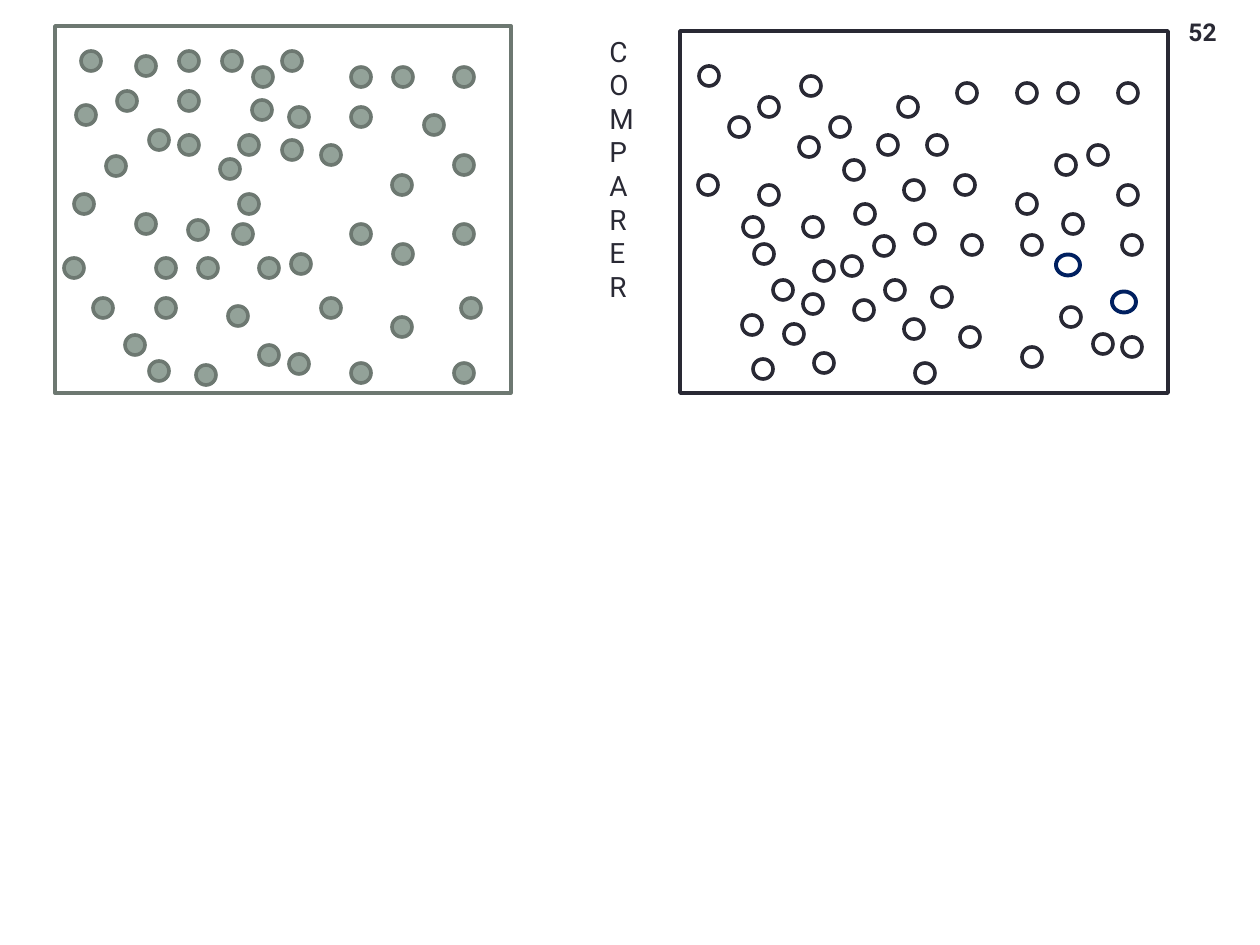
from dataclasses import dataclass

from pptx import Presentation, util as u
from pptx.dml.color import RGBColor
from pptx.enum import shapes, text

# Dot centres (x, y) in px
GREY_DOTS = [
    (86, 115), (146, 66), (146, 224), (84, 204), (189, 145), (249, 145),
    (249, 204), (243, 234), (198, 230), (116, 166), (159, 371),
    (263, 77), (361, 77), (361, 117), (331, 155), (299, 117),
    (403, 77), (464, 77), (464, 165), (434, 125), (402, 185),
    (301, 264), (361, 234), (361, 373), (331, 308), (299, 364),
    (403, 254), (464, 234), (464, 373), (471, 308), (402, 327),
    (91, 61), (189, 61), (189, 101), (159, 140), (127, 101),
    (232, 61), (292, 61), (292, 150), (262, 110), (230, 169),
    (74, 268), (166, 268), (166, 308), (135, 345), (103, 308),
    (208, 268), (269, 268), (269, 355), (238, 316), (206, 375),
]
WHITE_DOTS = [
    (764, 254), (824, 271), (824, 363), (794, 334), (763, 369),
    (865, 214), (925, 234), (925, 373), (895, 290), (864, 310),
    (967, 93), (1027, 93), (1027, 204), (937, 145), (965, 185),
    (1068, 93), (1128, 93), (1128, 195), (1098, 155), (1066, 165),
    (709, 76), (769, 107), (769, 195), (739, 127), (708, 185),
    (811, 86), (908, 107), (888, 145), (840, 127), (809, 147),
    (972, 245), (1032, 245), (1032, 357), (942, 297), (970, 337),
    (1073, 224), (1132, 245), (1132, 347), (1103, 344), (1071, 317),
    (753, 227), (813, 227), (813, 304), (783, 290), (752, 325),
    (854, 170), (914, 190), (914, 329), (884, 246), (852, 266),
]
BLUE_DOTS = [(1124, 302), (1068, 265)]

LABEL = ["C", "O", "M", "P", "ARER"]  # the narrow box breaks the last word
PAGE_NUMBER = "52"


@dataclass(frozen=True)
class Theme:
    font: str = "Roboto"
    label_size: int = 16
    number_size: int = 14
    ink: str = "292934"
    grey_fill: str = "93A299"
    grey_line: str = "6D7871"
    white: str = "FFFFFF"
    blue: str = "002060"
    line: float = 2.08
    blue_line: float = 2.25


THEME = Theme()

# centres, dot size, fill, line colour, line width
DOT_SETS = [
    (GREY_DOTS, (20, 20), THEME.grey_fill, THEME.grey_line, THEME.line),
    (WHITE_DOTS, (20, 20), THEME.white, THEME.ink, THEME.line),
    (BLUE_DOTS, (24, 21), None, THEME.blue, THEME.blue_line),
]
FRAMES = [
    ((55, 26, 456, 367), THEME.grey_line),
    ((680, 31, 488, 362), THEME.ink),
]


def px(value):
    return u.Inches(value / 126)


def add_outlined(slide, kind, box, fill, line, width):
    shape = slide.shapes.add_shape(kind, *map(px, box))
    shape.shadow.inherit = False
    if fill:
        shape.fill.solid()
        shape.fill.fore_color.rgb = RGBColor.from_string(fill)
    else:
        shape.fill.background()
    shape.line.color.rgb = RGBColor.from_string(line)
    shape.line.width = u.Pt(width)


def add_text(slide, box, lines, size, bold=False, align=text.PP_ALIGN.LEFT):
    frame = slide.shapes.add_textbox(*map(px, box)).text_frame
    frame.word_wrap = True
    frame.text = "\n".join(lines)
    for paragraph in frame.paragraphs:
        paragraph.alignment = align
        font = paragraph.font
        font.name, font.size, font.bold = THEME.font, u.Pt(size), bold
        font.color.rgb = RGBColor.from_string(THEME.ink)
    return frame


def main():
    presentation = Presentation()
    presentation.slide_width, presentation.slide_height = px(1260), px(945)
    slide = presentation.slides.add_slide(presentation.slide_layouts[6])

    for box, color in FRAMES:
        add_outlined(slide, shapes.MSO_SHAPE.RECTANGLE, box, None, color, THEME.line)
    for centres, (width, height), *style in DOT_SETS:
        for x, y in centres:
            box = (x - width / 2, y - height / 2, width, height)
            add_outlined(slide, shapes.MSO_SHAPE.OVAL, box, *style)

    label = add_text(slide, (597, 28, 53, 285), LABEL, THEME.label_size)
    label.auto_size = text.MSO_AUTO_SIZE.SHAPE_TO_FIT_TEXT
    number = add_text(slide, (1082, 9, 147, 45), [PAGE_NUMBER], THEME.number_size,
                      bold=True, align=text.PP_ALIGN.RIGHT)
    number.vertical_anchor = text.MSO_ANCHOR.MIDDLE

    presentation.save("out.pptx")


if __name__ == "__main__":
    main()
